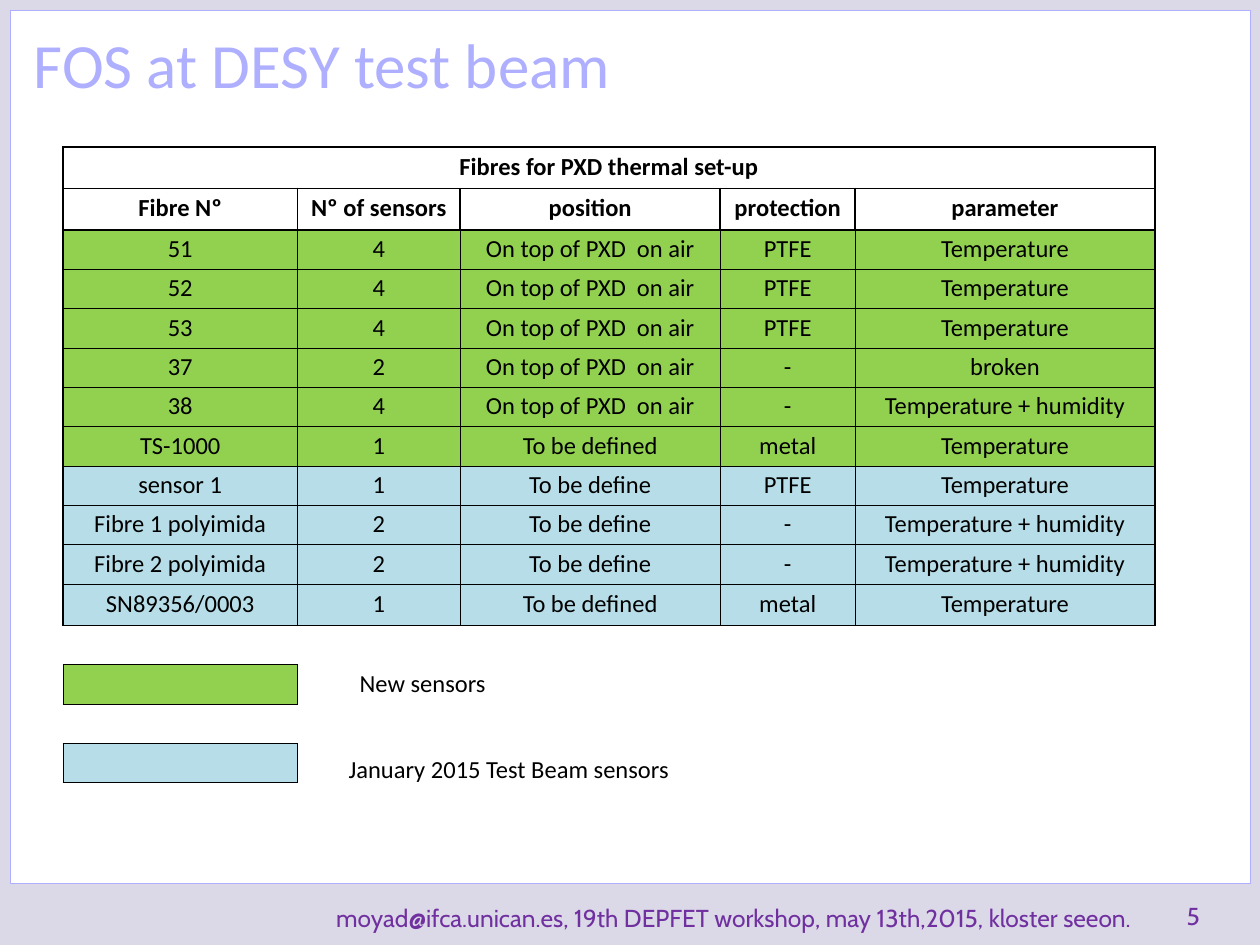
from lxml import etree
from pptx import Presentation
from pptx.dml.color import RGBColor
from pptx.enum import shapes, text
from pptx.oxml.ns import qn
from pptx.util import Pt

GREEN, BLUE, BLACK = "92D050", "B7DEE8", "000000"
LILAC, PURPLE = "AFAFFF", "7030A0"
THIN, THICK = 0.5, 1
CENTER, RIGHT, LEFT = text.PP_ALIGN.CENTER, text.PP_ALIGN.RIGHT, text.PP_ALIGN.LEFT
TOP, MIDDLE, BOTTOM = text.MSO_ANCHOR.TOP, text.MSO_ANCHOR.MIDDLE, text.MSO_ANCHOR.BOTTOM

HEADINGS = ["Fibre Nº", "Nº of sensors", "position", "protection", "parameter"]
ON_TOP = "On top of PXD  on air"
BOTH = "Temperature + humidity"
NEW_SENSORS = [
    ["51", "4", ON_TOP, "PTFE", "Temperature"],
    ["52", "4", ON_TOP, "PTFE", "Temperature"],
    ["53", "4", ON_TOP, "PTFE", "Temperature"],
    ["37", "2", ON_TOP, "-", "broken"],
    ["38", "4", ON_TOP, "-", BOTH],
    ["TS-1000", "1", "To be defined", "metal", "Temperature"],
]
JANUARY_SENSORS = [
    ["sensor 1", "1", "To be define", "PTFE", "Temperature"],
    ["Fibre 1 polyimida", "2", "To be define", "-", BOTH],
    ["Fibre 2 polyimida", "2", "To be define", "-", BOTH],
    ["SN89356/0003", "1", "To be defined", "metal", "Temperature"],
]
COLUMN_WIDTHS = [134, 93, 148.6, 77.1, 171.3]
ROW_HEIGHTS = [23.7, 23.7] + [22.5] * 9 + [23.7, 22.3, 22.7, 20.6, 22.7]


def color(value):
    """Turn a hex string into a colour."""
    return RGBColor.from_string(value)


def style_runs(paragraph, size, font, ink, bold=False):
    """Format every run of a paragraph."""
    for run in paragraph.runs:
        run.font.size, run.font.name, run.font.bold = Pt(size), font, bold
        run.font.color.rgb = color(ink)


def add_label(slide, box, wording, size, font, ink, align=LEFT, anchor=BOTTOM):
    """Place one line of text in a box."""
    frame = slide.shapes.add_textbox(*map(Pt, box)).text_frame
    frame.word_wrap, frame.vertical_anchor = True, anchor
    frame.text = wording
    frame.paragraphs[0].alignment = align
    style_runs(frame.paragraphs[0], size, font, ink)


def set_borders(cell, left=0, right=0, top=0, bottom=0):
    """Draw the four cell borders; a zero width hides one."""
    properties = cell._tc.get_or_add_tcPr()
    for side, width in zip("LRTB", (left, right, top, bottom)):
        line = etree.SubElement(properties, qn(f"a:ln{side}"), w=str(int(Pt(width))))
        if width:
            solid = etree.SubElement(line, qn("a:solidFill"))
            etree.SubElement(solid, qn("a:srgbClr"), val=BLACK)
        else:
            etree.SubElement(line, qn("a:noFill"))


def fill_cell(cell, wording="", fill=None, bold=False, align=CENTER, anchor=MIDDLE, indent=0.7):
    """Set the wording, layout and fill of a cell."""
    cell.margin_left, cell.margin_right = Pt(indent), Pt(0.7)
    cell.margin_top, cell.margin_bottom = Pt(0.7), 0
    cell.vertical_anchor = anchor
    cell.text = wording
    paragraph = cell.text_frame.paragraphs[0]
    paragraph.alignment, paragraph.line_spacing = align, 0.8
    style_runs(paragraph, 14, "Calibri", BLACK, bold)
    if fill:
        cell.fill.solid()
        cell.fill.fore_color.rgb = color(fill)
    else:
        cell.fill.background()


def fill_sensors(table, first_row):
    """Write the sensor rows, coloured by campaign."""
    rows = [(GREEN, row) for row in NEW_SENSORS] + [(BLUE, row) for row in JANUARY_SENSORS]
    for index, (fill, row) in enumerate(rows):
        for column, wording in enumerate(row):
            cell = table.cell(first_row + index, column)
            set_borders(
                cell,
                left=THIN if column else THICK,
                right=THICK if column == len(row) - 1 else THIN,
                top=THIN if index else THICK,
                bottom=THICK if index == len(rows) - 1 else THIN,
            )
            fill_cell(cell, wording, fill)


def fill_legend(table, first_row):
    """Write the colour key below the sensor rows."""
    labels = {
        1: (GREEN, "New sensors", dict(align=LEFT, indent=35.5)),
        3: (BLUE, "January 2015 Test Beam sensors", dict(anchor=BOTTOM)),
    }
    for offset in range(4):
        row = first_row + offset
        fill, wording, layout = labels.get(offset, (None, "", {}))
        for column in range(len(COLUMN_WIDTHS)):
            cell = table.cell(row, column)
            if column == 0:
                side = THIN if fill else 0
                set_borders(cell, side, side, THIN if offset else THICK, THIN)
                fill_cell(cell, fill=fill)
            else:
                set_borders(
                    cell,
                    left=THIN if fill and column == 1 else 0,
                    top=0 if offset else THICK,
                )
                if column == 1:
                    fill_cell(cell, wording, **layout)
                else:
                    fill_cell(cell)
        if fill:
            table.cell(row, 1).merge(table.cell(row, 2))


def add_fibre_table(slide, left, top):
    """Build the table of fibres with its colour key."""
    table = slide.shapes.add_table(
        len(ROW_HEIGHTS), len(COLUMN_WIDTHS), Pt(left), Pt(top),
        Pt(sum(COLUMN_WIDTHS)), Pt(sum(ROW_HEIGHTS)),
    ).table
    table.first_row = table.horz_banding = False
    for column, width in zip(table.columns, COLUMN_WIDTHS):
        column.width = Pt(width)
    for row, height in zip(table.rows, ROW_HEIGHTS):
        row.height = Pt(height)
    caption = ["Fibres for PXD thermal set-up"] + [""] * (len(HEADINGS) - 1)
    for row, wordings in enumerate([caption, HEADINGS]):
        for column, wording in enumerate(wordings):
            cell = table.cell(row, column)
            set_borders(cell, THICK, THICK, THICK, THICK)
            fill_cell(cell, wording, bold=True)
    table.cell(0, 0).merge(table.cell(0, len(HEADINGS) - 1))
    fill_sensors(table, 2)
    fill_legend(table, 2 + len(NEW_SENSORS) + len(JANUARY_SENSORS))


def add_frame(slide, left, top, width, height):
    """Place the white page panel with its title and footer."""
    slide.background.fill.solid()
    slide.background.fill.fore_color.rgb = color("DBD9E7")
    panel = slide.shapes.add_shape(
        shapes.MSO_SHAPE.RECTANGLE, Pt(left), Pt(top), Pt(width), Pt(height))
    panel.shadow.inherit = False
    panel.fill.solid()
    panel.fill.fore_color.rgb = color("FFFFFF")
    panel.line.color.rgb, panel.line.width = color(LILAC), Pt(0.25)
    add_label(slide, (left + 6.2, top + 4.8, 558, 90.7),
              "FOS at DESY test beam", 36, "Calibri", LILAC, anchor=TOP)
    footer_top = top + height - 5.8
    add_label(slide, (left + 665, footer_top, 41.8, 36), "5", 14, "Cabin", PURPLE)
    add_label(slide, (left + 125.8, footer_top + 1.4, 522, 36),
              "moyad@ifca.unican.es, 19th DEPFET workshop, may 13th,2015, kloster seeon.",
              14, "Cabin", PURPLE, RIGHT)


def main():
    """Build and save the slide."""
    deck = Presentation()
    deck.slide_width, deck.slide_height = Pt(720), Pt(540)
    slide = deck.slides.add_slide(deck.slide_layouts[6])
    add_frame(slide, 6, 6, 708.5, 499)
    add_fibre_table(slide, 36, 84)
    deck.save("out.pptx")


if __name__ == "__main__":
    main()
